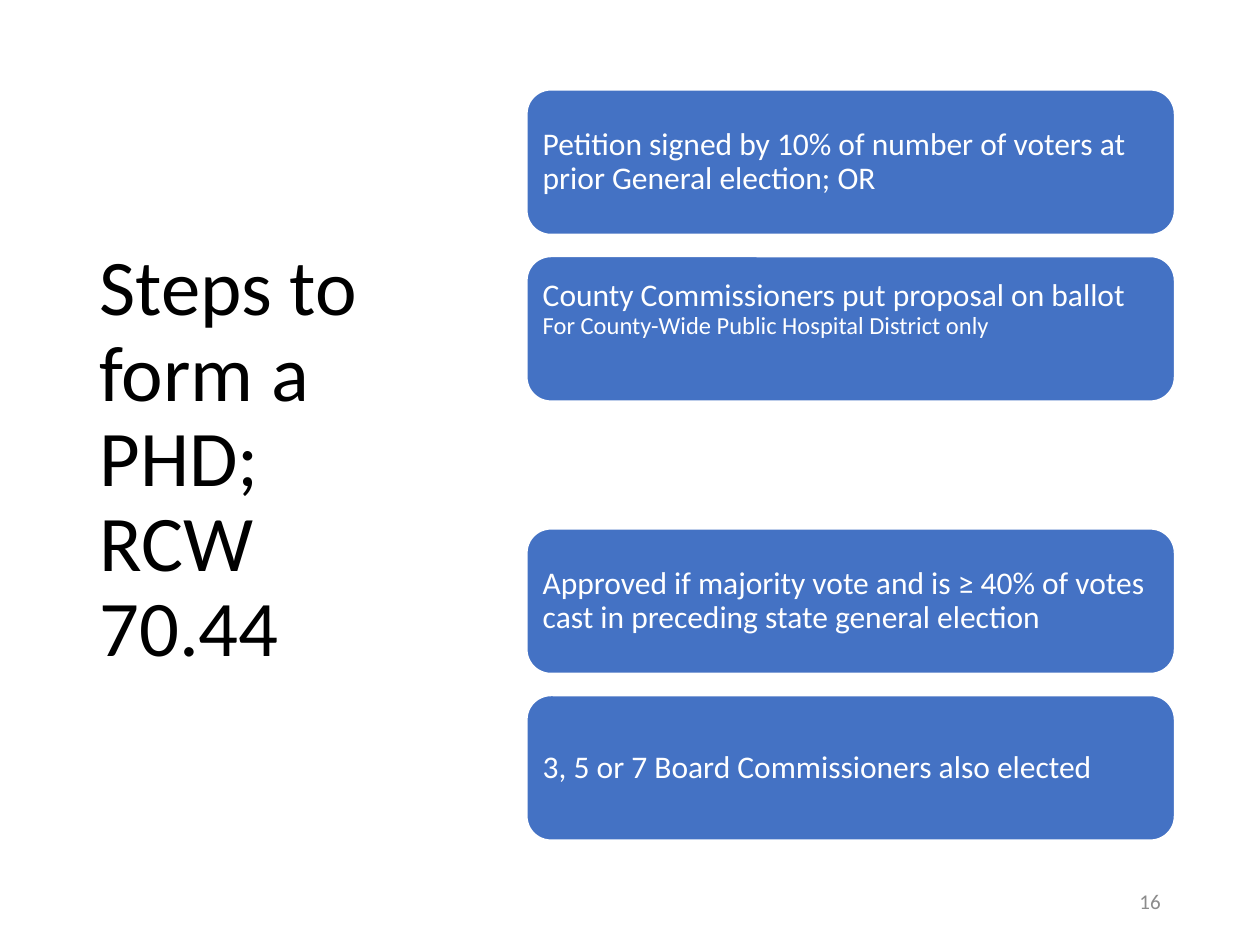
from dataclasses import dataclass

from pptx import Presentation
from pptx.dml.color import RGBColor as Color
from pptx.enum.shapes import MSO_SHAPE as Shape
from pptx.enum.text import MSO_ANCHOR as Anchor, MSO_AUTO_SIZE as AutoSize, PP_ALIGN as Align
from pptx.util import Cm, Pt


@dataclass(frozen=True)
class Theme:
    """Fonts, colours and type sizes of the deck."""
    font: str = "Calibri"
    ink: str = "000000"
    paper: str = "FFFFFF"
    accent: str = "4472C4"
    muted: str = "8C8C8C"
    title: int = 45
    step: int = 18
    note: int = 14
    number: int = 12


def add_span(para, text, *, font, size, color):
    """Add formatted text to a paragraph."""
    span = para.add_run()
    span.text = text
    span.font.name = font
    span.font.size = Pt(size)
    span.font.color.rgb = Color.from_string(color)


class StepsPage:
    """Draws the elements of a slide in one style."""

    def __init__(self, page, theme):
        self.page = page
        self.theme = theme

    def prepare(self, box, align, spacing=None):
        """Set up a text frame and return its first paragraph."""
        frame = box.text_frame
        frame.word_wrap = True
        frame.auto_size = AutoSize.NONE
        frame.vertical_anchor = Anchor.MIDDLE
        para = frame.paragraphs[0]
        para.alignment = align
        para.line_spacing = spacing
        return para

    def title(self, lines):
        """Fill the title placeholder, one line break between lines."""
        box = self.page.shapes.title
        box.left, box.top, box.width, box.height = Cm(1.75), Cm(1.55), Cm(7.04), Cm(15.47)
        para = self.prepare(box, Align.LEFT, 0.9)
        for index, line in enumerate(lines):
            if index:
                para.add_line_break()
            add_span(para, line, font=self.theme.font, size=self.theme.title, color=self.theme.ink)

    def step(self, top, text, note=None):
        """Add a rounded card with a step and an optional note below it."""
        theme = self.theme
        box = self.page.shapes.add_shape(
            Shape.ROUNDED_RECTANGLE, Cm(10.62), Cm(top), Cm(13.06), Cm(2.92))
        box.shadow.inherit = False
        box.fill.solid()
        box.fill.fore_color.rgb = Color.from_string(theme.accent)
        box.line.color.rgb = Color.from_string(theme.paper)
        box.line.width = Pt(1)
        para = self.prepare(box, Align.LEFT, 0.9)
        frame = box.text_frame
        frame.margin_left = frame.margin_right = Cm(0.18)
        frame.margin_top = Cm(0.18)
        frame.margin_bottom = Cm(0.94 if note else 0.18)
        add_span(para, text, font=theme.font, size=theme.step, color=theme.paper)
        if note:
            para.add_line_break()
            add_span(para, note, font=theme.font, size=theme.note, color=theme.paper)

    def number(self, text):
        """Add the page number at the lower right."""
        box = self.page.shapes.add_textbox(Cm(17.93), Cm(17.65), Cm(5.72), Cm(1.02))
        para = self.prepare(box, Align.RIGHT)
        add_span(para, text, font=self.theme.font, size=self.theme.number, color=self.theme.muted)


STEP_PITCH = 3.36
STEP_GROUPS = {
    1.81: [
        ("Petition signed by 10% of number of voters at prior General election; OR",),
        ("County Commissioners put proposal on ballot",
         "For County-Wide Public Hospital District only"),
    ],
    10.66: [
        ("Approved if majority vote and is ≥ 40% of votes cast in preceding state general election",),
        ("3, 5 or 7 Board Commissioners also elected",),
    ],
}


def main():
    """Build the slide and save the deck."""
    deck = Presentation()
    deck.slide_width, deck.slide_height = Cm(25.4), Cm(19.05)
    steps_page = StepsPage(deck.slides.add_slide(deck.slide_layouts[5]), Theme())
    steps_page.title(["Steps to form a PHD;", "RCW 70.44"])
    for top, steps in STEP_GROUPS.items():
        for row, texts in enumerate(steps):
            steps_page.step(top + row * STEP_PITCH, *texts)
    steps_page.number("16")
    deck.save("out.pptx")


if __name__ == "__main__":
    main()
